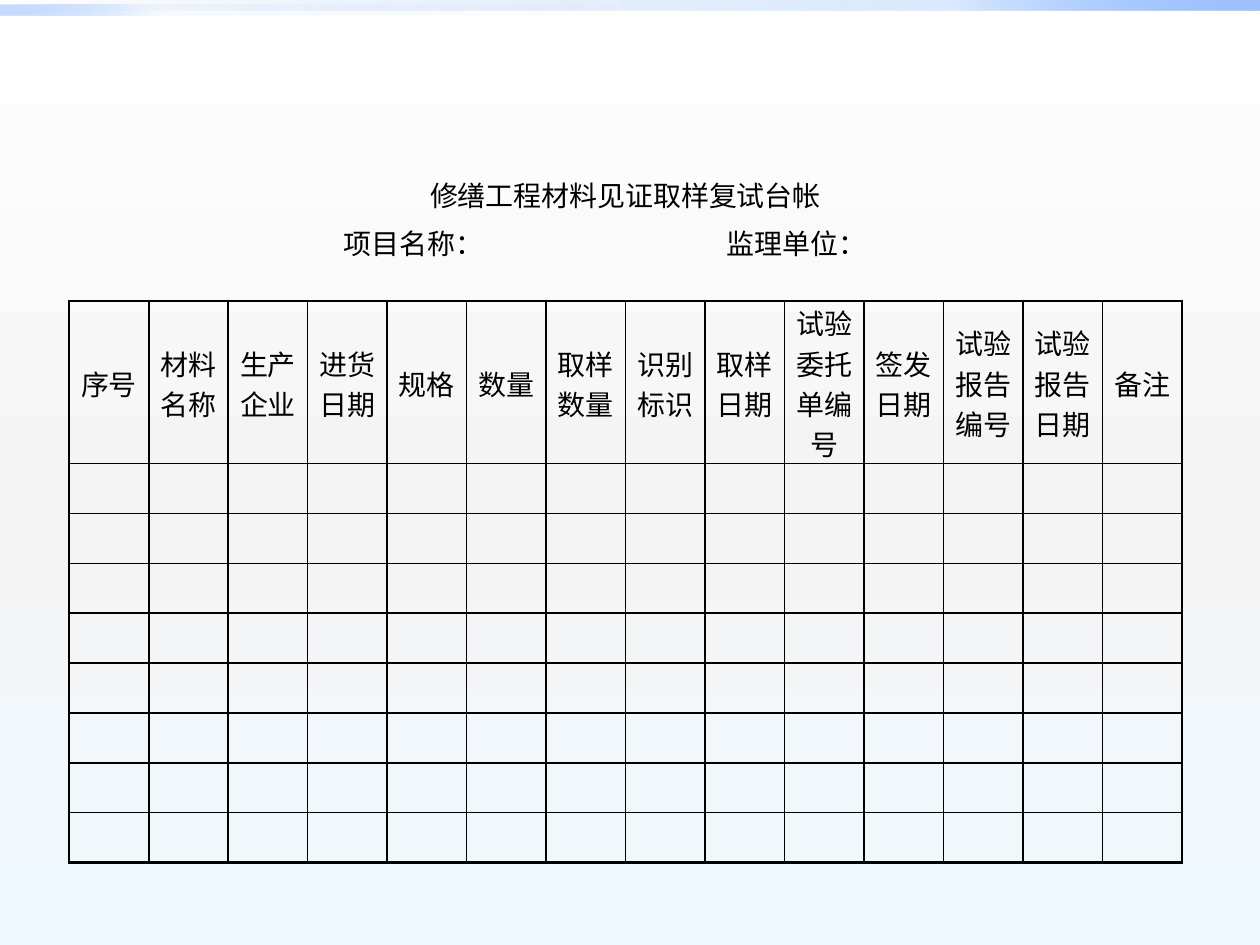
from lxml import etree
from pptx import Presentation
from pptx.dml.color import RGBColor
from pptx.enum.shapes import MSO_SHAPE
from pptx.enum.text import MSO_ANCHOR, PP_ALIGN
from pptx.oxml import parse_xml
from pptx.oxml.ns import nsdecls, qn
from pptx.util import Inches, Pt

RECTANGLE = MSO_SHAPE.RECTANGLE
TOP, MIDDLE = MSO_ANCHOR.TOP, MSO_ANCHOR.MIDDLE
LEFT, CENTER = PP_ALIGN.LEFT, PP_ALIGN.CENTER

FONT = "Noto Sans CJK SC"
BLACK = "000000"
TITLE = "修缮工程材料见证取样复试台帐"
PROJECT_FIELDS = ["项目名称：", "监理单位："]
FIELD_STOPS = [2.17, 5.21]
HEADINGS = [
    "序号", "材料名称", "生产企业", "进货日期", "规格", "数量", "取样数量",
    "识别标识", "取样日期", "试验委托单编号", "签发日期", "试验报告编号",
    "试验报告日期", "备注",
]
EMPTY_ROWS = 8
ROW_HEIGHTS = [0.42, 0.64, 1.28] + [0.396] * EMPTY_ROWS
TABLE_LEFT, TABLE_TOP, TABLE_WIDTH = 0.55, 1.33, 8.83
HEADING_ROW = 2
THIN, THICK = 1, 1.5

BACKGROUND = [(0, "FFFFFF", 100), (55, "F4F4F4", 100), (100, "EEF9FF", 100)]
BANDS = [
    ((0, 0, 10, 0.08), 315,
     [(0, "0058B7", 0), (75, "4F95FF", 20), (100, "9EC2FF", 100)]),
    ((0, 0.04, 5, 0.08), 135,
     [(0, "0058B7", 0), (75, "4F95FF", 5), (100, "9EC2FF", 60)]),
]


def color(value):
    return RGBColor.from_string(value)


def set_gradient(fill, parent, stops, angle):
    fill.solid()
    stop_xml = "".join(
        f'<a:gs pos="{position * 1000}"><a:srgbClr val="{value}">'
        f'<a:alpha val="{opacity * 1000}"/></a:srgbClr></a:gs>'
        for position, value, opacity in stops
    )
    gradient = parse_xml(
        f'<a:gradFill {nsdecls("a")} rotWithShape="1"><a:gsLst>{stop_xml}</a:gsLst>'
        f'<a:lin ang="{angle * 60000}" scaled="0"/></a:gradFill>'
    )
    solid = next(parent.iter(qn("a:solidFill")))
    solid.getparent().replace(solid, gradient)


def add_text(cell, text, size=16, align=CENTER, anchor=MIDDLE, stops=()):
    cell.vertical_anchor = anchor
    paragraph = cell.text_frame.paragraphs[0]
    paragraph.alignment = align
    if stops:
        tabs = etree.SubElement(paragraph._p.get_or_add_pPr(), qn("a:tabLst"))
        for stop in stops:
            etree.SubElement(tabs, qn("a:tab"), pos=str(Inches(stop)), algn="l")
    run = paragraph.add_run()
    run.text = text
    run.font.size = Pt(size)
    run.font.name = FONT
    run.font.color.rgb = color(BLACK)
    east_asian = etree.SubElement(run._r.get_or_add_rPr(), qn("a:ea"))
    east_asian.set("typeface", FONT)


def set_borders(cell, widths):
    properties = cell._tc.get_or_add_tcPr()
    for index, (side, width) in enumerate(zip("LRTB", widths)):
        line = etree.Element(qn(f"a:ln{side}"), w=str(Pt(width)))
        if width:
            solid = etree.SubElement(line, qn("a:solidFill"))
            etree.SubElement(solid, qn("a:srgbClr"), val=BLACK)
        else:
            etree.SubElement(line, qn("a:noFill"))
        properties.insert(index, line)


def border_widths(row, column):
    last_row, last_column = len(ROW_HEIGHTS) - 1, len(HEADINGS) - 1
    if row < HEADING_ROW:
        return 0, 0, 0, THICK if row == HEADING_ROW - 1 else 0
    return (
        THICK if column == 0 else THIN,
        THICK if column == last_column else THIN,
        THICK if row == HEADING_ROW else THIN,
        THICK if row == last_row else THIN,
    )


def add_ledger(slide):
    table = slide.shapes.add_table(
        len(ROW_HEIGHTS), len(HEADINGS), Inches(TABLE_LEFT), Inches(TABLE_TOP),
        Inches(TABLE_WIDTH), Inches(sum(ROW_HEIGHTS)),
    ).table
    table.first_row = table.horz_banding = False
    for row, height in zip(table.rows, ROW_HEIGHTS):
        row.height = Inches(height)
    for column in table.columns:
        column.width = Inches(TABLE_WIDTH / len(HEADINGS))
    for row in range(len(ROW_HEIGHTS)):
        for column in range(len(HEADINGS)):
            cell = table.cell(row, column)
            cell.margin_left = cell.margin_right = cell.margin_top = Inches(0.01)
            cell.margin_bottom = 0
            cell.fill.background()
            set_borders(cell, border_widths(row, column))
    for row in range(HEADING_ROW):
        table.cell(row, 0).merge(table.cell(row, len(HEADINGS) - 1))
    add_text(table.cell(0, 0), TITLE)
    add_text(table.cell(1, 0), "".join("\t" + field for field in PROJECT_FIELDS),
             align=LEFT, anchor=TOP, stops=FIELD_STOPS)
    for column, heading in enumerate(HEADINGS):
        add_text(table.cell(HEADING_ROW, column), heading)


def main():
    presentation = Presentation()
    presentation.slide_width, presentation.slide_height = Inches(10), Inches(7.5)
    slide = presentation.slides.add_slide(presentation.slide_layouts[6])
    set_gradient(slide.background.fill, slide.element, BACKGROUND, 90)
    for place, angle, stops in BANDS:
        band = slide.shapes.add_shape(RECTANGLE, *map(Inches, place))
        band.shadow.inherit = False
        band.line.fill.background()
        set_gradient(band.fill, band.element, stops, angle)
    add_ledger(slide)
    presentation.save("out.pptx")


if __name__ == "__main__":
    main()
